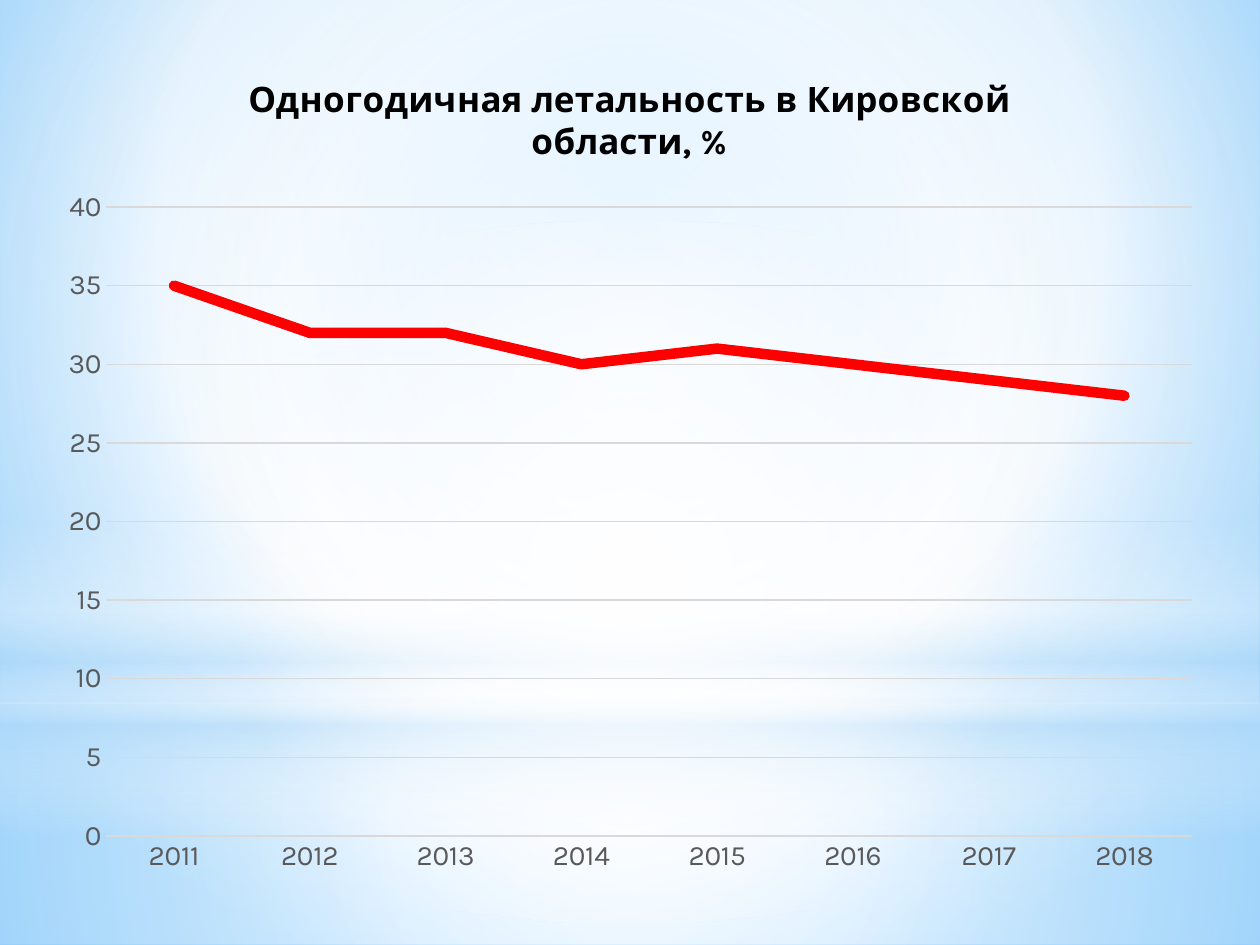
"""Build a slide with a line chart of one-year mortality on a soft blue glow."""
from lxml.etree import SubElement as Sub
from pptx import Presentation
from pptx.chart.data import CategoryChartData as Data
from pptx.dml.color import RGBColor as RGB
from pptx.enum.chart import XL_CHART_TYPE as Chart, XL_TICK_MARK as Tick
from pptx.enum.shapes import MSO_SHAPE as Shape
from pptx.oxml import parse_xml
from pptx.oxml.ns import nsdecls, qn
from pptx.util import Inches, Pt

TITLE = "Одногодичная летальность в Кировской области, %"
YEARS = [str(year) for year in range(2011, 2019)]
RATES = [35, 32, 32, 30, 31, 30, 29, 28]

THEME = dict(font="Karla", ink="000000", gray="595959", grid="D9D9D9",
             red="FF0000", white="FFFFFF", mist="B4DCFA",
             sky="9ED5FF", deep="5BB9FF", base=10, tick=16, head=20)
WIDE, HIGH = 10, 7.5
MID = (50, 50, 50, 50)
SKY = [(0, "sky", 100), (60, "white", 100), (100, "deep", 100)]
GLOWS = [
    (Shape.RECTANGLE, (0, 0.744, 1, 0.256), MID,
     [(0, "white", 91), (37, "white", 76), (100, "mist", 79)]),
    (Shape.RECTANGLE, (0, 0, 1, 0.744), MID,
     [(0, "white", 89), (48, "white", 62), (100, "mist", 79)]),
    (Shape.RECTANGLE, (0, 0.55, 1, 0.333), None,
     [(0, "white", 0), (29, "white", 30), (45, "mist", 40),
      (55, "white", 26), (65, "mist", 60), (100, "white", 0)]),
    (Shape.OVAL, (0, 0.233, 1, 0.744), MID,
     [(0, "white", 100), (56, "white", 0)]),
]
CHART = (0.035, 0.048, 0.929, 0.892)
PLOT = dict(x=0.053, y=0.192, w=0.928, h=0.746)


def place(box):
    """Turn shares of the slide into lengths."""
    return [Inches(part * size) for part, size in zip(box, (WIDE, HIGH) * 2)]


def blend(fill, root, stops, focus):
    """Give a fill a gradient, round when it has a focus."""
    fill.solid()
    old = root.xpath(".//a:solidFill")[0]
    marks = "".join(
        f'<a:gs pos="{pos * 1000}"><a:srgbClr val="{THEME[hue]}">'
        f'<a:alpha val="{alpha * 1000}"/></a:srgbClr></a:gs>'
        for pos, hue, alpha in stops)
    if focus:
        sides = " ".join(f'{side}="{part * 1000}"' for side, part in zip("ltrb", focus))
        way = f'<a:path path="circle"><a:fillToRect {sides}/></a:path>'
    else:
        way = '<a:lin ang="5400000" scaled="0"/>'
    new = parse_xml(f'<a:gradFill {nsdecls("a")} rotWithShape="1">'
                    f'<a:gsLst>{marks}</a:gsLst>{way}</a:gradFill>')
    old.getparent().replace(old, new)


def style(font, size, hue, bold=False):
    """Set the look of a font."""
    font.name, font.size, font.bold = THEME["font"], Pt(THEME[size]), bold
    font.color.rgb = RGB.from_string(THEME[hue])


def write(frame, text, **form):
    """Put formatted text in a frame."""
    run = frame.paragraphs[0].add_run()
    run.text = text
    style(run.font, **form)


def stroke(line, hue, width):
    """Set the colour and width of a line."""
    line.color.rgb = RGB.from_string(THEME[hue])
    line.width = Pt(width)


def pin(chart):
    """Fix the inner plot area within the chart."""
    area = chart.element.find(".//" + qn("c:plotArea"))
    for old in area.findall(qn("c:layout")):
        area.remove(old)
    lay = parse_xml(f'<c:layout {nsdecls("c")}/>')
    area.insert(0, lay)
    hold = Sub(lay, qn("c:manualLayout"))
    rules = [("layoutTarget", "inner"), ("xMode", "edge"), ("yMode", "edge")]
    for tag, val in rules + list(PLOT.items()):
        Sub(hold, qn("c:" + tag)).set("val", str(val))


def draw(slide):
    """Add the line chart."""
    data = Data()
    data.categories = YEARS
    data.add_series("Series 1", RATES)
    chart = slide.shapes.add_chart(Chart.LINE, *place(CHART), data).chart
    style(chart.font, "base", "ink")
    chart.has_legend = False
    chart.has_title = True
    write(chart.chart_title.text_frame, TITLE, size="head", hue="ink", bold=True)
    chart.chart_title.include_in_layout = False
    for axis in (chart.category_axis, chart.value_axis):
        axis.major_tick_mark = axis.minor_tick_mark = Tick.NONE
        style(axis.tick_labels.font, "tick", "gray")
    stroke(chart.category_axis.format.line, "grid", 0.75)
    scale = chart.value_axis
    scale.minimum_scale, scale.maximum_scale, scale.major_unit = 0, 40, 5
    scale.format.line.fill.background()
    stroke(scale.major_gridlines.format.line, "grid", 0.75)
    plot = chart.plots[0]
    plot.vary_by_categories = False
    trend = plot.series[0]
    trend.smooth = False
    stroke(trend.format.line, "red", 6)
    trend.format.line._get_or_add_ln().set("cap", "rnd")
    pin(chart)


def main():
    """Build and save the deck."""
    deck = Presentation()
    deck.slide_width, deck.slide_height = Inches(WIDE), Inches(HIGH)
    slide = deck.slides.add_slide(deck.slide_layouts[6])
    blend(slide.background.fill, slide.element, SKY, (20, 10, 20, 60))
    for kind, box, focus, stops in GLOWS:
        glow = slide.shapes.add_shape(kind, *place(box))
        glow.shadow.inherit = False
        glow.line.fill.background()
        blend(glow.fill, glow.element, stops, focus)
    draw(slide)
    deck.save("out.pptx")


if __name__ == "__main__":
    main()
